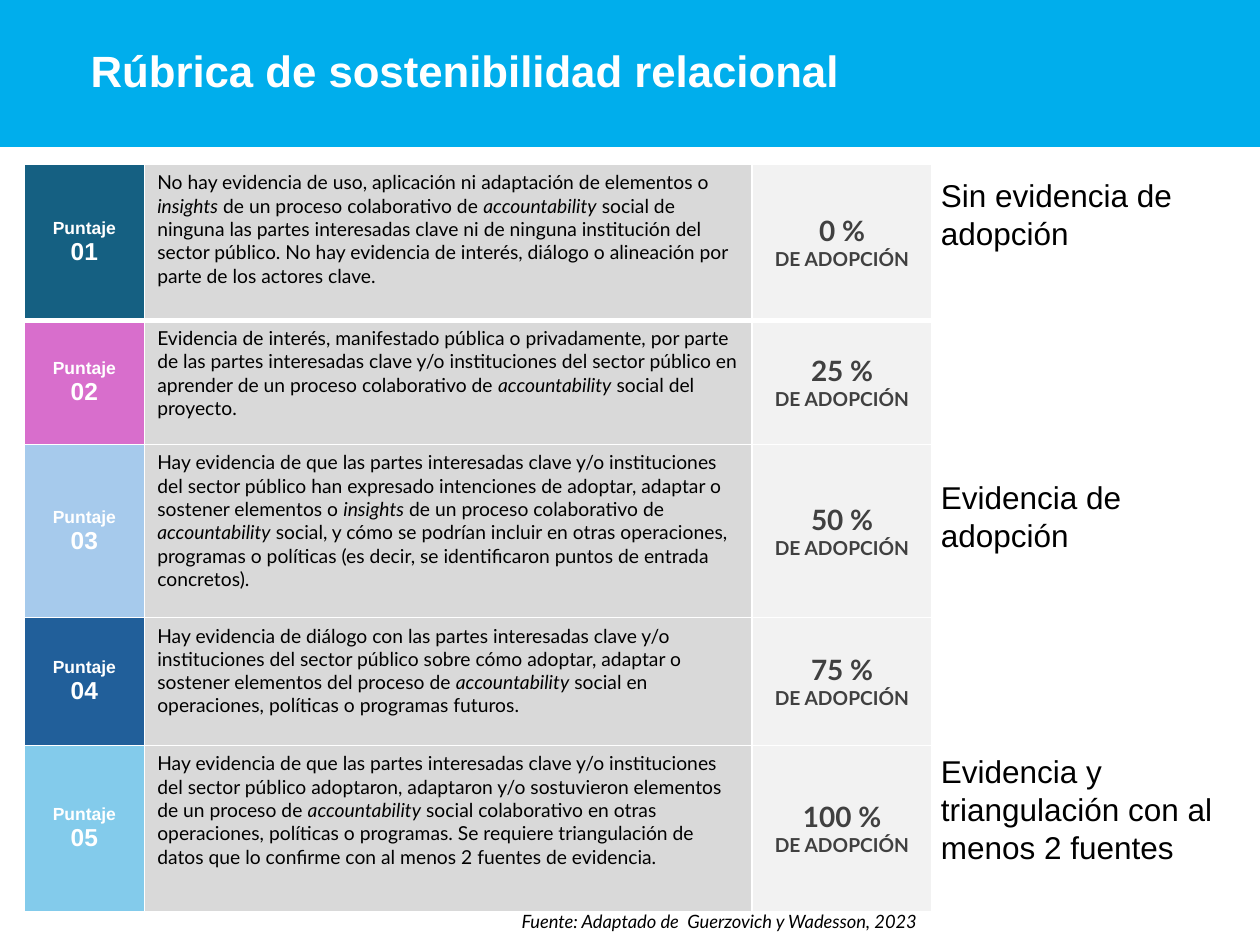
import pptx
import pptx.dml.color
import pptx.enum.shapes
import pptx.enum.text
import pptx.oxml
import pptx.oxml.ns
import pptx.util

Pt = pptx.util.Pt
ALIGN = pptx.enum.text.PP_ALIGN
ANCHOR = pptx.enum.text.MSO_ANCHOR

COLORS = {
    "band": "00AEEC",
    "white": "FFFFFF",
    "black": "000000",
    "body": "D9D9D9",
    "rate": "F2F2F2",
    "gray": "404040",
}

WIDTHS = [69, 347, 103]

# Row height, score colour, description (italics between asterisks), rate
ROWS = [
    (89, "156082",
     "No hay evidencia de uso, aplicación ni adaptación de elementos o "
     "*insights* de un proceso colaborativo de *accountability* social de "
     "ninguna las partes interesadas clave ni de ninguna institución del "
     "sector público. No hay evidencia de interés, diálogo o alineación por "
     "parte de los actores clave.", "0 %"),
    (71, "D86ECC",
     "Evidencia de interés, manifestado pública o privadamente, por parte de "
     "las partes interesadas clave y/o instituciones del sector público en "
     "aprender de un proceso colaborativo de *accountability* social del "
     "proyecto.", "25 %"),
    (99, "A6CAEC",
     "Hay evidencia de que las partes interesadas clave y/o instituciones "
     "del sector público han expresado intenciones de adoptar, adaptar o "
     "sostener elementos o *insights* de un proceso colaborativo de "
     "*accountability* social, y cómo se podrían incluir en otras "
     "operaciones, programas o políticas (es decir, se identificaron puntos "
     "de entrada concretos).", "50 %"),
    (73, "215F9A",
     "Hay evidencia de diálogo con las partes interesadas clave y/o "
     "instituciones del sector público sobre cómo adoptar, adaptar o "
     "sostener elementos del proceso de *accountability* social en "
     "operaciones, políticas o programas futuros.", "75 %"),
    (95, "83CBEB",
     "Hay evidencia de que las partes interesadas clave y/o instituciones "
     "del sector público adoptaron, adaptaron y/o sostuvieron elementos de "
     "un proceso de *accountability* social colaborativo en otras "
     "operaciones, políticas o programas. Se requiere triangulación de datos "
     "que lo confirme con al menos 2 fuentes de evidencia.", "100 %"),
]

# Top and wording of the notes beside the table
NOTES = [
    (93.6, "Sin evidencia de adopción"),
    (266.2, "Evidencia de adopción"),
    (422.6, "Evidencia y triangulación con al menos 2 fuentes"),
]


def rgb(code):
    return pptx.dml.color.RGBColor.from_string(code)


def style(run, size, face, color, bold=False, italic=False):
    font = run.font
    font.size, font.name = Pt(size), face
    font.bold, font.italic = bold, italic
    font.color.rgb = rgb(color)


def pad(frame, size):
    frame.margin_left = frame.margin_right = Pt(size)
    frame.margin_top = frame.margin_bottom = Pt(size)


def add_band(slide):
    band = slide.shapes.add_shape(
        pptx.enum.shapes.MSO_SHAPE.RECTANGLE, 0, 0, Pt(720), Pt(84))
    band.shadow.inherit = False
    band.fill.solid()
    band.fill.fore_color.rgb = rgb(COLORS["band"])
    band.line.fill.background()
    # The band lies behind the title
    slide.shapes.title.element.addprevious(band.element)


def set_title(slide, text):
    title = slide.shapes.title
    title.left, title.top = Pt(48.2), Pt(9.4)
    title.width, title.height = Pt(649.4), Pt(64.8)
    frame = title.text_frame
    pad(frame, 3.6)
    frame.vertical_anchor = ANCHOR.MIDDLE
    frame.text = text
    para = frame.paragraphs[0]
    para.alignment = ALIGN.LEFT
    para.line_spacing = 0.9
    style(para.runs[0], 25, "Arial", COLORS["white"], bold=True)


def add_text(slide, box, text, size, face, align=ALIGN.LEFT, italic=False):
    shape = slide.shapes.add_textbox(*[Pt(v) for v in box])
    frame = shape.text_frame
    frame.word_wrap = True
    pad(frame, 7.2)
    frame.text = text
    para = frame.paragraphs[0]
    para.alignment = align
    style(para.runs[0], size, face, COLORS["black"], italic=italic)


def fill_cell(cell, color, top, bottom):
    cell.fill.solid()
    cell.fill.fore_color.rgb = rgb(color)
    props = cell._tc.get_or_add_tcPr()
    space = pptx.oxml.ns.nsdecls("a")
    sides = [("L", 1), ("R", 1), ("T", top), ("B", bottom)]
    for spot, (side, width) in enumerate(sides):
        props.insert(spot, pptx.oxml.parse_xml(
            f'<a:ln{side} {space} w="{Pt(width)}"><a:solidFill>'
            f'<a:srgbClr val="{COLORS["white"]}"/></a:solidFill></a:ln{side}>'))


def set_pair(cell, lines, sizes, face, color):
    cell.vertical_anchor = ANCHOR.MIDDLE
    cell.text_frame.text = "\n".join(lines)
    for para, size in zip(cell.text_frame.paragraphs, sizes):
        para.alignment = ALIGN.CENTER
        style(para.runs[0], size, face, color, bold=True)


def set_body(cell, text):
    para = cell.text_frame.paragraphs[0]
    for spot, part in enumerate(text.split("*")):
        run = para.add_run()
        run.text = part
        style(run, 11, "Lato", COLORS["black"], italic=spot % 2 == 1)


def add_rubric(slide):
    high = sum(row[0] for row in ROWS)
    frame = slide.shapes.add_table(
        len(ROWS), len(WIDTHS), Pt(13.7), Pt(94), Pt(sum(WIDTHS)), Pt(high))
    table = frame.table
    table.first_row = table.horz_banding = False
    for col, width in zip(table.columns, WIDTHS):
        col.width = Pt(width)
    for num, (height, color, text, rate) in enumerate(ROWS):
        table.rows[num].height = Pt(height)
        cells = table.rows[num].cells
        # A thicker rule sets the first row apart
        top, bottom = (3 if num == 1 else 1), (3 if num == 0 else 1)
        for cell, tone in zip(cells, [color, COLORS["body"], COLORS["rate"]]):
            fill_cell(cell, tone, top, bottom)
        set_pair(cells[0], ["Puntaje", f"{num + 1:02}"], [10, 14],
                 "Arial", COLORS["white"])
        set_body(cells[1], text)
        set_pair(cells[2], [rate, "DE ADOPCIÓN"], [16, 11],
                 "Lato", COLORS["gray"])


def main():
    deck = pptx.Presentation()
    deck.slide_width, deck.slide_height = Pt(720), Pt(540)
    slide = deck.slides.add_slide(deck.slide_layouts[5])

    # Header
    add_band(slide)
    set_title(slide, "Rúbrica de sostenibilidad relacional")

    # Rubric and side notes
    add_rubric(slide)
    for top, text in NOTES:
        add_text(slide, (530.6, top, 175.7, 64.8), text, 18, "Arial")

    # Source line
    add_text(slide, (209.5, 514, 321.8, 22.3),
             "Fuente: Adaptado de  Guerzovich y Wadesson, 2023",
             10.5, "Lato", ALIGN.RIGHT, italic=True)
    deck.save("out.pptx")


if __name__ == "__main__":
    main()
